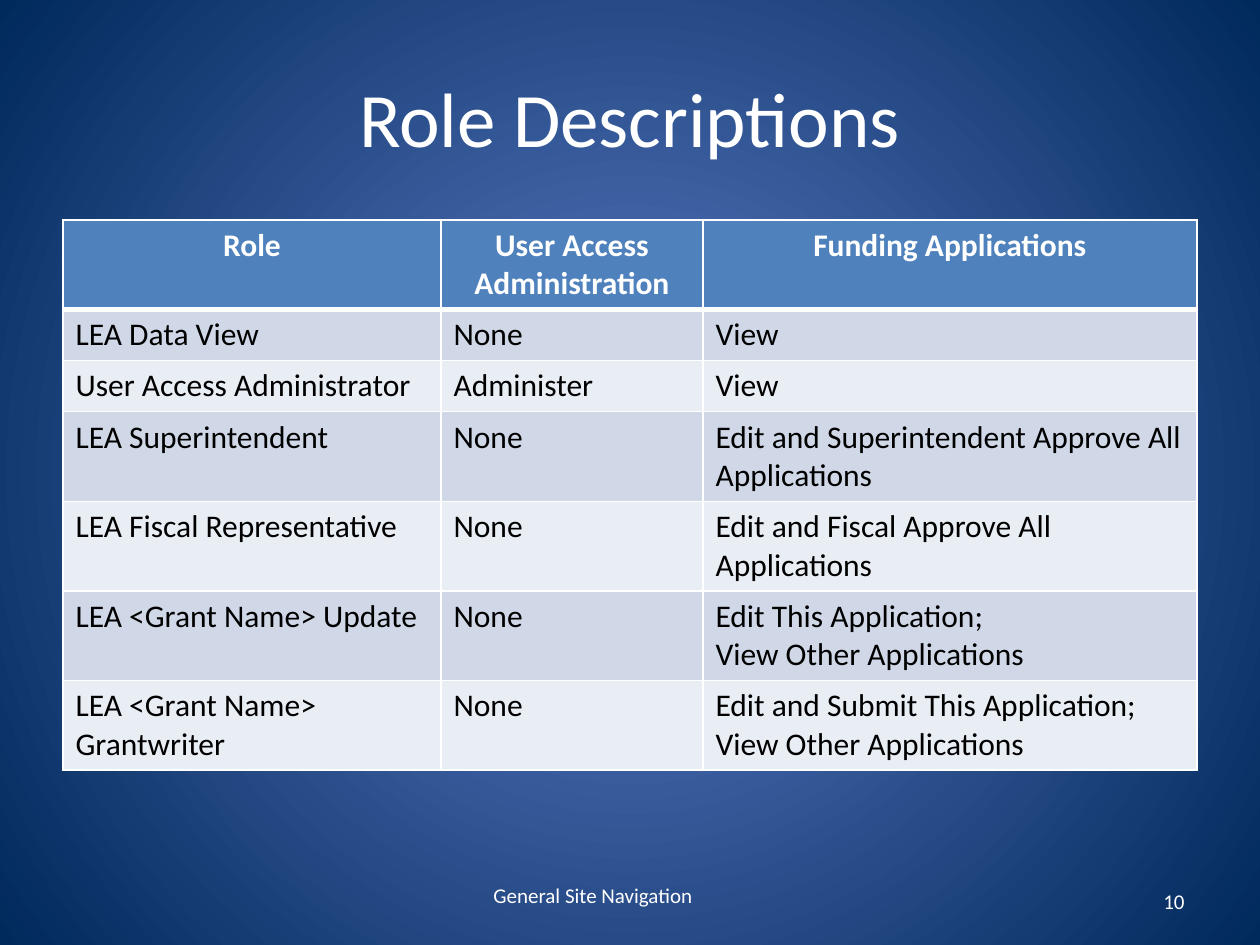
from dataclasses import dataclass

from lxml import etree
from pptx import Presentation
from pptx.dml.color import RGBColor
from pptx.enum.text import MSO_ANCHOR, PP_ALIGN
from pptx.oxml.ns import qn
from pptx.util import Pt

EMU_PER_PX = 914400 / 126
LEFT, CENTER, RIGHT = PP_ALIGN.LEFT, PP_ALIGN.CENTER, PP_ALIGN.RIGHT
TOP, MIDDLE = MSO_ANCHOR.TOP, MSO_ANCHOR.MIDDLE
TITLE_ONLY = 5


def px(length):
    return round(length * EMU_PER_PX)


@dataclass(frozen=True)
class Theme:
    font: str = "Calibri"
    glow: str = "5E7CC5"
    edge: str = "00295C"
    light: str = "FFFFFF"
    dark: str = "000000"
    header: str = "4F81BD"
    bands: tuple = ("D0D8E8", "E9EDF4")
    title_size: int = 44
    table_size: int = 18
    footer_size: int = 12
    thin: int = 1
    thick: int = 3


class SlideBuilder:
    def __init__(self, slide, theme):
        self.slide = slide
        self.theme = theme

    def background(self):
        """Radial gradient from the centre of the slide."""
        fill = self.slide.background.fill
        fill.gradient()
        for stop, color in zip(fill.gradient_stops, (self.theme.glow, self.theme.edge)):
            stop.color.rgb = RGBColor.from_string(color)
        gradient = self.slide.element.find(".//" + qn("a:gradFill"))
        gradient.remove(gradient.find(qn("a:lin")))
        circle = etree.SubElement(gradient, qn("a:path"), {"path": "circle"})
        etree.SubElement(circle, qn("a:fillToRect"), dict.fromkeys("ltrb", "50000"))

    def add_text(self, frame, lines, size, color, align=LEFT, bold=False):
        for index, line in enumerate(lines):
            paragraph = frame.add_paragraph() if index else frame.paragraphs[0]
            paragraph.alignment = align
            run = paragraph.add_run()
            run.text = line
            run.font.name = self.theme.font
            run.font.size = Pt(size)
            run.font.bold = bold
            run.font.color.rgb = RGBColor.from_string(color)

    def title(self, text, left, top, width, height):
        shape = self.slide.shapes.title
        shape.left, shape.top = px(left), px(top)
        shape.width, shape.height = px(width), px(height)
        shape.text_frame.vertical_anchor = MIDDLE
        self.add_text(shape.text_frame, [text], self.theme.title_size, self.theme.light, CENTER)

    def footer(self, text, left, top, width, height, align, anchor):
        shape = self.slide.shapes.add_textbox(px(left), px(top), px(width), px(height))
        shape.text_frame.word_wrap = True
        shape.text_frame.vertical_anchor = anchor
        self.add_text(shape.text_frame, [text], self.theme.footer_size, self.theme.light, align)

    def borders(self, cell, top, bottom):
        properties = cell._tc.get_or_add_tcPr()
        thin = self.theme.thin
        for side, width in (("L", thin), ("R", thin), ("T", top), ("B", bottom)):
            line = etree.SubElement(properties, qn("a:ln" + side), {"w": str(int(Pt(width)))})
            solid = etree.SubElement(line, qn("a:solidFill"))
            etree.SubElement(solid, qn("a:srgbClr"), {"val": self.theme.light})

    def table(self, rows, left, top, column_widths, row_heights):
        theme = self.theme
        table = self.slide.shapes.add_table(
            len(rows), len(column_widths), px(left), px(top),
            px(sum(column_widths)), px(sum(row_heights))).table
        for column, width in zip(table.columns, column_widths):
            column.width = px(width)
        for row_index, (row, height) in enumerate(zip(rows, row_heights)):
            table.rows[row_index].height = px(height)
            is_header = row_index == 0
            fill = theme.header if is_header else theme.bands[(row_index - 1) % 2]
            for column_index, text in enumerate(row):
                cell = table.cell(row_index, column_index)
                # The header is closed off by a thick rule
                self.borders(cell, theme.thick if row_index == 1 else theme.thin,
                             theme.thick if is_header else theme.thin)
                cell.fill.solid()
                cell.fill.fore_color.rgb = RGBColor.from_string(fill)
                self.add_text(cell.text_frame, text.split("\n"), theme.table_size,
                              theme.light if is_header else theme.dark,
                              CENTER if is_header else LEFT, is_header)


ROLES = [
    ("Role", "User Access Administration", "Funding Applications"),
    ("LEA Data View", "None", "View"),
    ("User Access Administrator", "Administer", "View"),
    ("LEA Superintendent", "None", "Edit and Superintendent Approve All Applications"),
    ("LEA Fiscal Representative", "None", "Edit and Fiscal Approve All Applications"),
    ("LEA <Grant Name> Update", "None", "Edit This Application;\nView Other Applications"),
    ("LEA <Grant Name> Grantwriter", "None",
     "Edit and Submit This Application;\nView Other Applications"),
]


def main():
    presentation = Presentation()
    presentation.slide_width, presentation.slide_height = px(1260), px(945)
    slide = presentation.slides.add_slide(presentation.slide_layouts[TITLE_ONLY])
    builder = SlideBuilder(slide, Theme())

    # Background and title
    builder.background()
    builder.title("Role Descriptions", 63, 38, 1134, 157)

    # Role table: rows grow to fit their text
    builder.table(ROLES, 63, 220, (378, 262, 494), [51] * len(ROLES))

    # Footer
    builder.footer("10", 903, 876, 294, 50, RIGHT, MIDDLE)
    builder.footer("General Site Navigation", 472, 876, 242, 50, CENTER, TOP)

    presentation.save("out.pptx")


if __name__ == "__main__":
    main()
